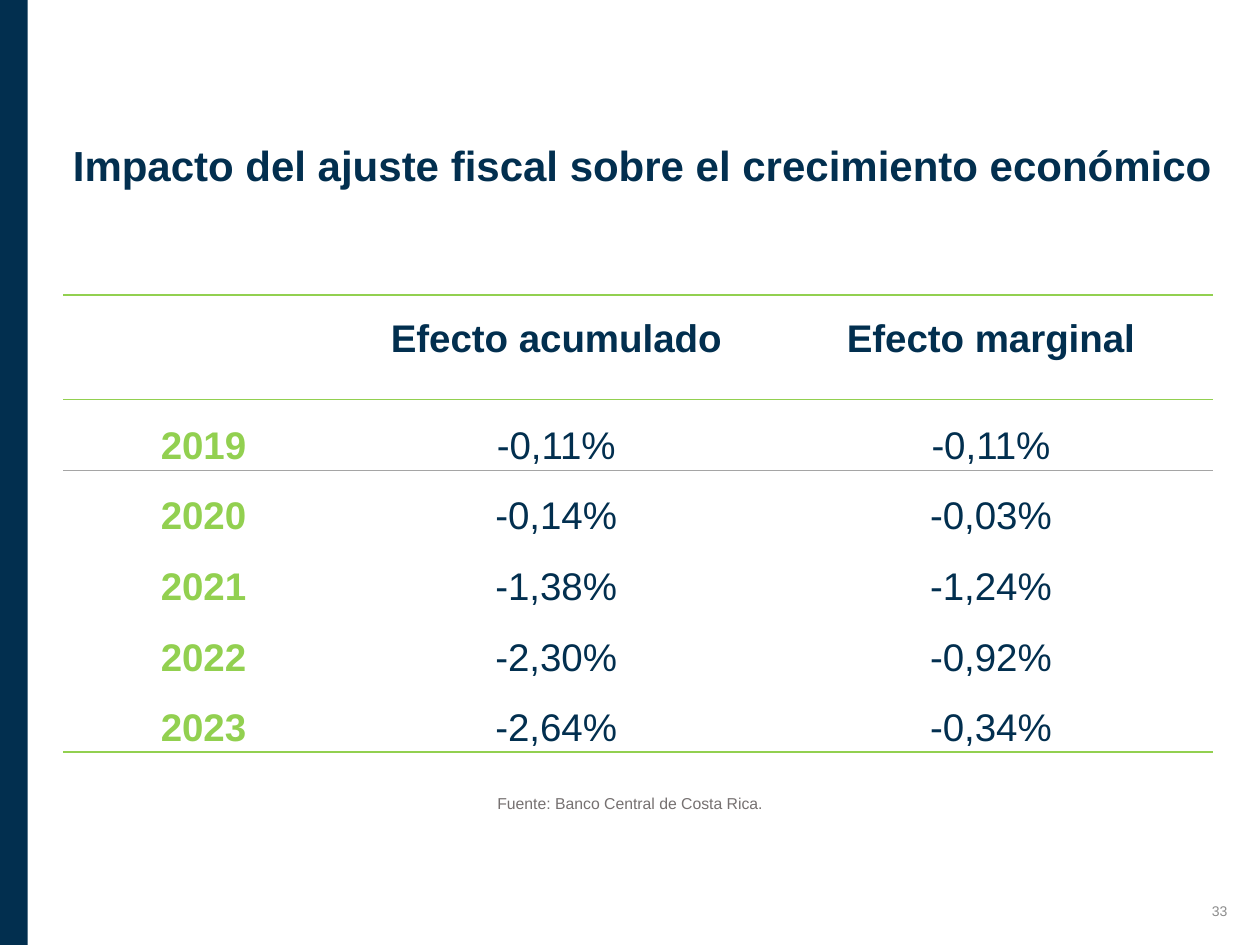
from lxml.etree import SubElement
from pptx import Presentation
from pptx.dml.color import RGBColor
from pptx.enum.shapes import MSO_SHAPE
from pptx.enum.text import MSO_ANCHOR, PP_ALIGN
from pptx.oxml.ns import qn
from pptx.util import Inches, Pt

WIDE, HIGH = 10, 7.5
NAVY, LIME, GRAY = "022F4F", "92D050", "A5A5A5"
HEAD = ["", "Efecto acumulado", "Efecto marginal"]
DATA = [
    ["2019", "-0,11%", "-0,11%"],
    ["2020", "-0,14%", "-0,03%"],
    ["2021", "-1,38%", "-1,24%"],
    ["2022", "-2,30%", "-0,92%"],
    ["2023", "-2,64%", "-0,34%"],
]
COLS = [2.23, 3.37, 3.53]
ROWS = [0.83] + [0.56] * len(DATA)
RULES = {0: (LIME, 1), 1: (LIME, 1), 2: (GRAY, 0.5), len(ROWS): (LIME, 1)}


def color(code):
    """Turn a hex string into a colour."""
    return RGBColor.from_string(code)


def place(left, top, width, height):
    """Turn shares of the slide into lengths."""
    return (Inches(left * WIDE), Inches(top * HIGH),
            Inches(width * WIDE), Inches(height * HIGH))


def style(frame, size, code, bold=False, align=PP_ALIGN.LEFT, space=1):
    """Format every paragraph of a text frame."""
    for para in frame.paragraphs:
        para.alignment = align
        para.line_spacing = space
        for run in para.runs:
            run.font.name = "Arial"
            run.font.size = Pt(size)
            run.font.bold = bold
            run.font.color.rgb = color(code)


def label(slide, box, text, size, code, wrap=True, **look):
    """Add one line of text in a box."""
    frame = slide.shapes.add_textbox(*place(*box)).text_frame
    frame.word_wrap = wrap
    frame.vertical_anchor = MSO_ANCHOR.MIDDLE
    frame.text = text
    style(frame, size, code, **look)


def band(slide, box):
    """Draw the dark band on the left edge."""
    bar = slide.shapes.add_shape(MSO_SHAPE.RECTANGLE, *place(*box))
    bar.shadow.inherit = False
    bar.fill.solid()
    bar.fill.fore_color.rgb = color(NAVY)
    bar.line.fill.background()


def border(cell, row):
    """Rule the cell above and below, and leave its sides open."""
    props = cell._tc.get_or_add_tcPr()
    sides = [("a:lnL", None), ("a:lnR", None),
             ("a:lnT", RULES.get(row)), ("a:lnB", RULES.get(row + 1))]
    for spot, (tag, rule) in enumerate(sides):
        line = SubElement(props, qn(tag))
        if rule:
            line.set("w", str(Pt(rule[1])))
            fill = SubElement(line, qn("a:solidFill"))
            SubElement(fill, qn("a:srgbClr")).set("val", rule[0])
        else:
            SubElement(line, qn("a:noFill"))
        props.insert(spot, line)


def grid(slide, box):
    """Build the table of effects by year."""
    table = slide.shapes.add_table(len(ROWS), len(COLS), *place(*box)).table
    table.first_row = table.horz_banding = False
    for col, width in zip(table.columns, COLS):
        col.width = Inches(box[2] * WIDE * width / sum(COLS))
    for row, height in zip(table.rows, ROWS):
        row.height = Inches(box[3] * HIGH * height / sum(ROWS))
    for i, texts in enumerate([HEAD] + DATA):
        for j, text in enumerate(texts):
            cell = table.cell(i, j)
            cell.fill.background()
            cell.margin_left = cell.margin_right = cell.margin_top = Inches(0.01)
            cell.margin_bottom = 0
            cell.vertical_anchor = MSO_ANCHOR.MIDDLE if i else MSO_ANCHOR.TOP
            cell.text_frame.text = text
            style(cell.text_frame, 22, NAVY if j else LIME,
                  bold=i == 0 or j == 0, align=PP_ALIGN.CENTER, space=1.5)
            border(cell, i)


def main():
    """Build the slide and save it."""
    deck = Presentation()
    deck.slide_width, deck.slide_height = Inches(WIDE), Inches(HIGH)
    slide = deck.slides.add_slide(deck.slide_layouts[6])
    label(slide, (0.706, 0.937, 0.278, 0.053), "33", 8, "8C8C8C",
          align=PP_ALIGN.RIGHT)
    label(slide, (0.048, 0.141, 0.932, 0.067),
          "Impacto del ajuste fiscal sobre el crecimiento económico",
          24, NAVY, wrap=False, bold=True)
    band(slide, (-0.001, 0, 0.023, 1))
    label(slide, (0, 0.833, 1, 0.033), "Fuente: Banco Central de Costa Rica.",
          9, "767171", align=PP_ALIGN.CENTER)
    grid(slide, (0.05, 0.312, 0.913, 0.484))
    deck.save("out.pptx")


if __name__ == "__main__":
    main()
